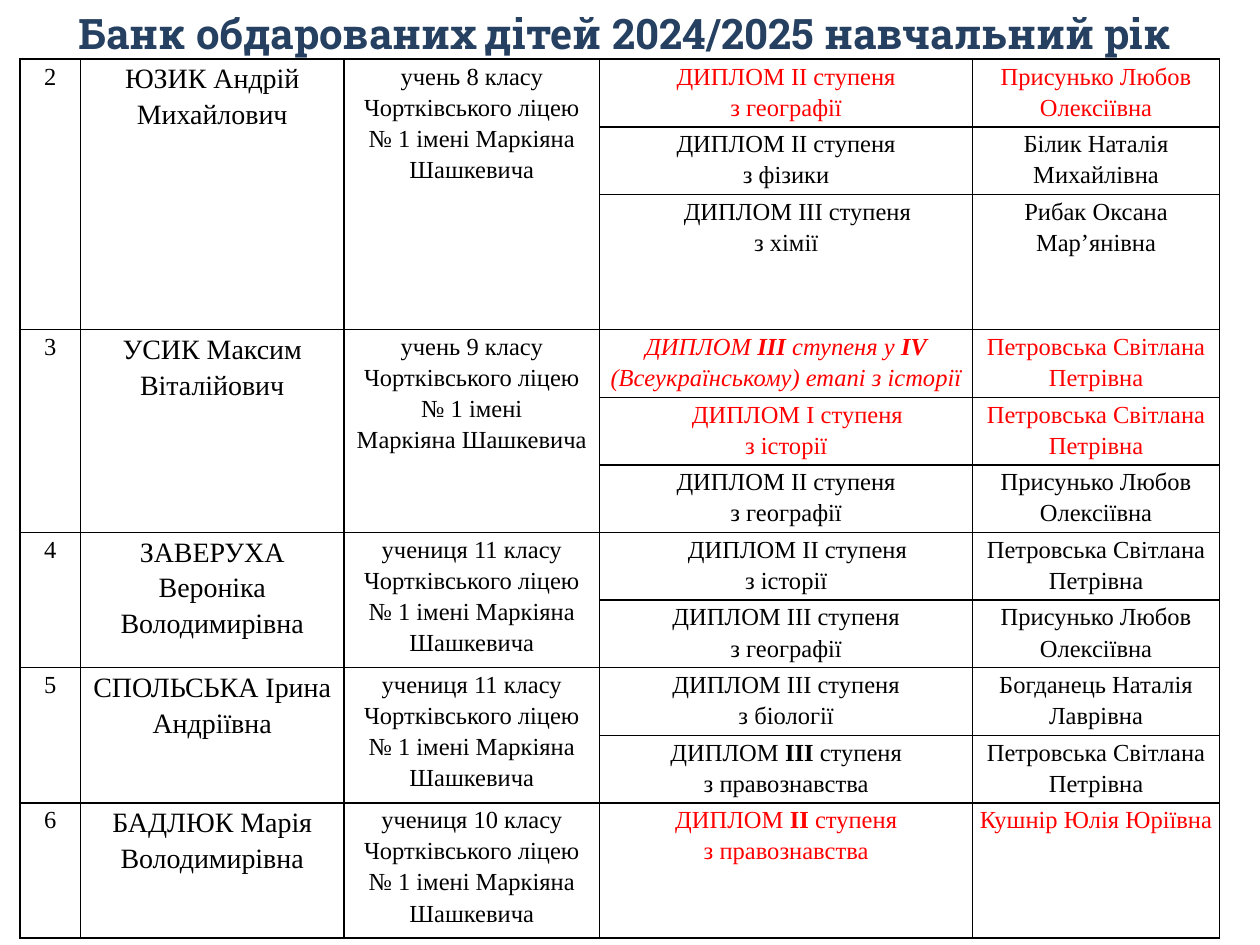
from dataclasses import dataclass

import lxml.etree
import pptx
import pptx.dml.color
import pptx.enum.text
import pptx.oxml.ns
import pptx.table
import pptx.text.text
import pptx.util
from pptx.util import Inches

COLORS = {"title": "254061", "text": "000000", "highlight": "FF0000", "border": "000000"}
TITLE_FONT, TABLE_FONT = "Roboto Slab", "Times New Roman"
COLUMN_WIDTHS = (0.48, 2.09, 2.03, 2.96, 1.96)
ROW_HEIGHT, TALL_ROW_HEIGHT = 0.53, 1.07
INDENT = 0.18
SCHOOL = "Чортківського ліцею № 1 імені Маркіяна Шашкевича"
HISTORIAN = "Петровська Світлана Петрівна"
GEOGRAPHER = "Присунько Любов Олексіївна"


@dataclass
class Award:
    """A diploma; asterisks in its lines enclose bold text."""
    lines: tuple[str, ...]
    teacher: str
    color: str = "text"
    indent: float = 0
    italic: bool = False
    height: float = ROW_HEIGHT


@dataclass
class Student:
    number: str
    name: str
    school: str
    awards: tuple[Award, ...]


STUDENTS = (
    Student("2", "ЮЗИК Андрій Михайлович", f"учень 8 класу {SCHOOL}", (
        Award(("ДИПЛОМ ІІ ступеня", "з географії"), GEOGRAPHER, "highlight"),
        Award(("ДИПЛОМ ІІ ступеня", "з фізики"), "Білик Наталія Михайлівна"),
        Award(("ДИПЛОМ ІІІ ступеня", "з хімії"), "Рибак Оксана Мар’янівна",
              indent=INDENT, height=TALL_ROW_HEIGHT),
    )),
    Student("3", "УСИК Максим Віталійович",
            "учень 9 класу " + SCHOOL.replace("імені ", "імені\v"), (
        Award(("ДИПЛОМ *ІІІ* ступеня у *ІV* (Всеукраїнському) етапі з історії",),
              HISTORIAN, "highlight", italic=True),
        Award(("ДИПЛОМ І ступеня", "з історії"), HISTORIAN, "highlight", INDENT),
        Award(("ДИПЛОМ ІІ ступеня", "з географії"), GEOGRAPHER),
    )),
    Student("4", "ЗАВЕРУХА Вероніка Володимирівна", f"учениця 11 класу {SCHOOL}", (
        Award(("ДИПЛОМ ІІ ступеня", "з історії"), HISTORIAN, indent=INDENT),
        Award(("ДИПЛОМ ІІІ ступеня", "з географії"), GEOGRAPHER),
    )),
    Student("5", "СПОЛЬСЬКА Ірина Андріївна", f"учениця 11 класу {SCHOOL}", (
        Award(("ДИПЛОМ ІІІ ступеня", "з біології"), "Богданець Наталія Лаврівна"),
        Award(("ДИПЛОМ *ІІІ* ступеня", "з правознавства"), HISTORIAN),
    )),
    Student("6", "БАДЛЮК Марія Володимирівна", f"учениця 10 класу {SCHOOL}", (
        Award(("ДИПЛОМ *ІІ* ступеня", "з правознавства"), "Кушнір Юлія Юріївна",
              "highlight", height=TALL_ROW_HEIGHT),
    )),
)


def style_paragraph(paragraph: pptx.text.text._Paragraph, font: str, size: float,
                    color: str) -> None:
    paragraph.alignment = pptx.enum.text.PP_ALIGN.CENTER
    paragraph.font.name = font
    paragraph.font.size = pptx.util.Pt(size)
    paragraph.font.color.rgb = pptx.dml.color.RGBColor.from_string(COLORS[color])


def write_cell(cell: pptx.table._Cell, lines: tuple[str, ...], size: float = 14,
               color: str = "text", indent: float = 0, italic: bool = False) -> None:
    """Write one paragraph per line, with the indent on the first only."""
    frame = cell.text_frame
    for index, line in enumerate(lines):
        paragraph = frame.add_paragraph() if index else frame.paragraphs[0]
        parts = line.split("*")
        if len(parts) == 1:
            paragraph.text = line
        else:
            for position, part in enumerate(parts):
                run = paragraph.add_run()
                run.text = part
                run.font.bold = position % 2 == 1
        if indent and index == 0:
            paragraph._p.get_or_add_pPr().set("marL", str(Inches(indent)))
        paragraph.line_spacing = 1.15
        style_paragraph(paragraph, TABLE_FONT, size, color)
        if italic:
            paragraph.font.italic = True


def format_cell(cell: pptx.table._Cell) -> None:
    cell.margin_left = cell.margin_right = Inches(0.05)
    cell.margin_top = cell.margin_bottom = 0
    properties = cell._tc.get_or_add_tcPr()
    qn = pptx.oxml.ns.qn
    for side in ("lnL", "lnR", "lnT", "lnB"):
        border = lxml.etree.SubElement(properties, qn(f"a:{side}"), w=str(pptx.util.Pt(1)))
        fill = lxml.etree.SubElement(border, qn("a:solidFill"))
        lxml.etree.SubElement(fill, qn("a:srgbClr"), val=COLORS["border"])
    cell.fill.background()


def add_title(slide: pptx.slide.Slide) -> None:
    title = slide.shapes.add_textbox(Inches(0.08), Inches(0.01), Inches(9.76), Inches(0.5))
    frame = title.text_frame
    frame.word_wrap = True
    frame.auto_size = pptx.enum.text.MSO_AUTO_SIZE.SHAPE_TO_FIT_TEXT
    heading = frame.paragraphs[0]
    heading.text = "Банк обдарованих дітей 2024/2025 навчальний рік"
    style_paragraph(heading, TITLE_FONT, 24, "title")
    heading.font.bold = True


def add_student_table(slide: pptx.slide.Slide) -> None:
    heights = [award.height for student in STUDENTS for award in student.awards]
    table = slide.shapes.add_table(
        len(heights), len(COLUMN_WIDTHS), Inches(0.16), Inches(0.47),
        Inches(sum(COLUMN_WIDTHS)), Inches(sum(heights))).table
    table.first_row = table.horz_banding = False
    for column, width in zip(table.columns, COLUMN_WIDTHS):
        column.width = Inches(width)
    for row, height in zip(table.rows, heights):
        row.height = Inches(height)
    for cell in table.iter_cells():
        format_cell(cell)

    top = 0
    for student in STUDENTS:
        bottom = top + len(student.awards) - 1
        for column, (text, size) in enumerate(
                ((student.number, 14), (student.name, 16), (student.school, 14))):
            cell = table.cell(top, column)
            if bottom > top:
                cell.merge(table.cell(bottom, column))
            write_cell(cell, (text,), size)
        for row, award in enumerate(student.awards, top):
            write_cell(table.cell(row, 3), award.lines, color=award.color,
                       indent=award.indent, italic=award.italic)
            write_cell(table.cell(row, 4), (award.teacher,), color=award.color)
        top = bottom + 1


def main() -> None:
    presentation = pptx.Presentation()
    presentation.slide_width = Inches(10)
    presentation.slide_height = Inches(7.5)
    slide = presentation.slides.add_slide(presentation.slide_layouts[6])
    add_title(slide)
    add_student_table(slide)
    presentation.save("out.pptx")


if __name__ == "__main__":
    main()
